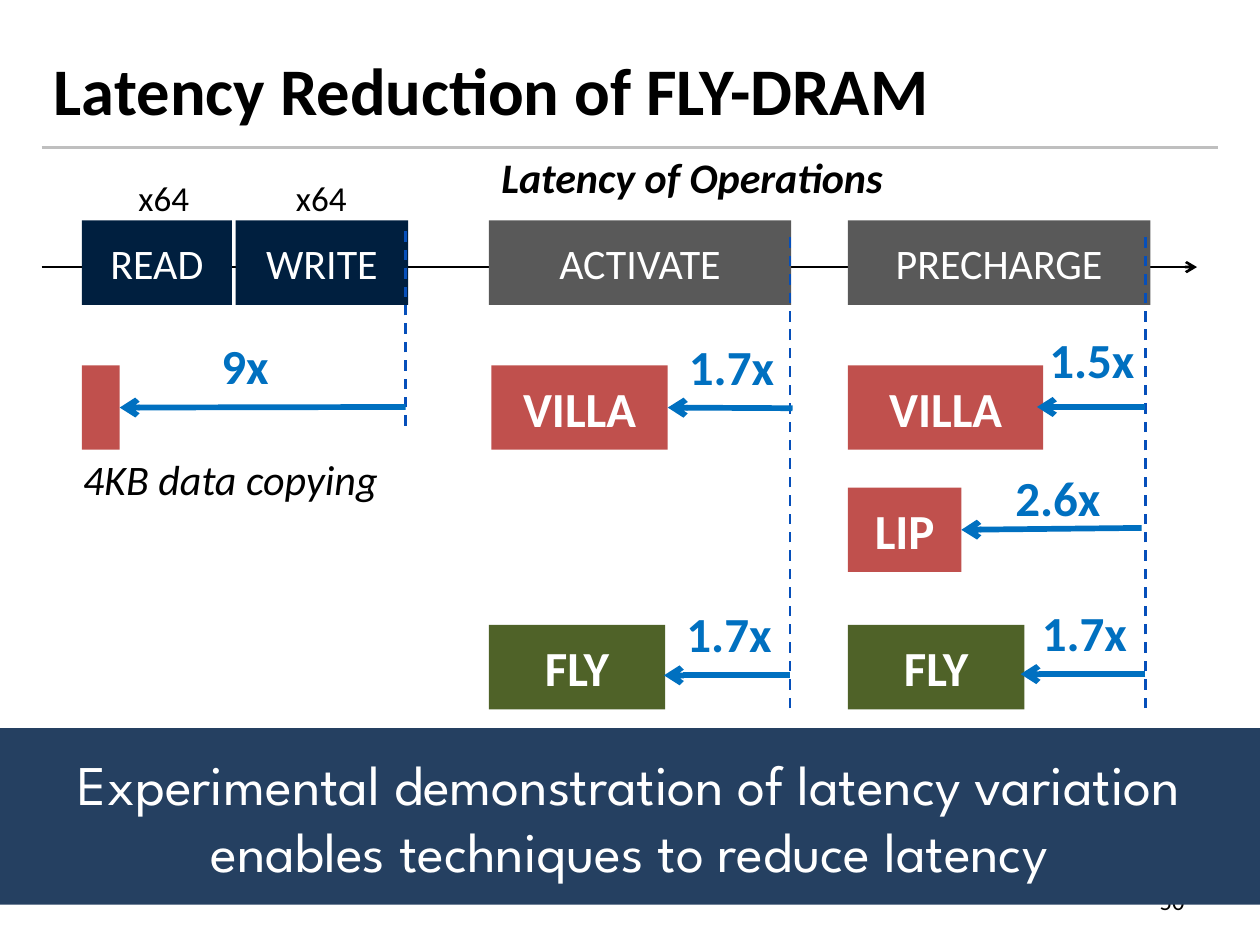
from pptx import Presentation
from pptx.util import Inches, Pt
from pptx.dml.color import RGBColor
from pptx.enum.dml import MSO_LINE
from pptx.enum.shapes import MSO_CONNECTOR, MSO_SHAPE
from pptx.enum.text import MSO_ANCHOR, PP_ALIGN
from pptx.oxml.ns import qn
from lxml.etree import SubElement

THEME = {
    "body": "Calibri", "display": "League Spartan",
    "black": "000000", "white": "FFFFFF", "rule": "BFBFBF",
    "copy": "001F3F", "operation": "595959", "prior": "C0504D",
    "fly": "4F6228", "gain": "0070C0", "limit": "064FBA", "band": "254061",
    "title": 38, "message": 32, "strong": 28, "label": 24, "count": 20, "page": 14,
}

deck = Presentation()
deck.slide_width, deck.slide_height = Inches(10), Inches(7.5)
COL, ROW = deck.slide_width / 100, deck.slide_height / 75
slide = deck.slides.add_slide(deck.slide_layouts[6])


def add_block(col, row, cols, rows, text="", fill=None, size="label", color="black",
              face="body", align=PP_ALIGN.LEFT, anchor=MSO_ANCHOR.TOP, wrap=True, **style):
    box = [round(v) for v in (col * COL, row * ROW, cols * COL, rows * ROW)]
    if fill:
        block = slide.shapes.add_shape(MSO_SHAPE.RECTANGLE, *box)
        block.shadow.inherit = False
        block.fill.solid()
        block.fill.fore_color.rgb = RGBColor.from_string(THEME[fill])
        block.line.fill.background()
        color, align, anchor = "white", PP_ALIGN.CENTER, MSO_ANCHOR.MIDDLE
    else:
        block = slide.shapes.add_textbox(*box)
    frame = block.text_frame
    frame.word_wrap, frame.vertical_anchor = wrap, anchor
    if text:
        paragraph = frame.paragraphs[0]
        paragraph.alignment = align
        run = paragraph.add_run()
        run.text = text
        run.font.color.rgb = RGBColor.from_string(THEME[color])
        for name, value in {"name": THEME[face], "size": Pt(THEME[size]), **style}.items():
            setattr(run.font, name, value)
    return block


def add_line(start, end, color, width=1.5, arrow=False, **style):
    ends = [round(v) for v in (start[0] * COL, start[1] * ROW, end[0] * COL, end[1] * ROW)]
    line = slide.shapes.add_connector(MSO_CONNECTOR.STRAIGHT, *ends)
    line.line.color.rgb = RGBColor.from_string(THEME[color])
    for name, value in {"width": Pt(width), **style}.items():
        setattr(line.line, name, value)
    if arrow:
        SubElement(line.line._get_or_add_ln(), qn("a:tailEnd"), type="arrow")
    SubElement(line._element.spPr, qn("a:effectLst"))
    return line


COPY, ACTIVATE, PRECHARGE = 6.5, 38.8, 67.3
OPERATION_ROW, VILLA_ROW, LIP_ROW, FLY_ROW = 17.5, 29, 38.7, 49.6
BAR = 6.7

add_line((3.3, 11.7), (96.7, 11.7), "rule")
add_block(3.3, 0.8, 93.3, 12.5, "Latency Reduction of FLY-DRAM", size="title",
          anchor=MSO_ANCHOR.MIDDLE, bold=True)
add_block(71.7, 69.5, 23.3, 4, "50", size="page", align=PP_ALIGN.RIGHT, anchor=MSO_ANCHOR.MIDDLE)

add_line((3.3, 21.2), (95, 21.2), "black", arrow=True)
add_block(ACTIVATE, 11.5, 35.2, 5, "Latency of Operations", wrap=False, bold=True, italic=True)
for operation, col, cols, fill in (
    ("READ", COPY, 11.9, "copy"),
    ("WRITE", 18.7, 13.7, "copy"),
    ("ACTIVATE", ACTIVATE, 24, "operation"),
    ("PRECHARGE", PRECHARGE, 24, "operation"),
):
    add_block(col, OPERATION_ROW, cols, BAR, operation, fill)
for col in (10, 22.5):
    add_block(col, 13.5, 6.2, 4.4, "x64", size="count", wrap=False)
add_block(5.6, 35.5, 30.2, 5, "4KB data copying", italic=True)

for col, top, bottom in ((32.2, 17.8, 33.8), (62.7, 18.4, 56.2), (90.9, 18.4, 56.2)):
    add_line((col, bottom), (col, top), "limit", dash_style=MSO_LINE.DASH)

for technique, fill, col, row, cols, gain, gain_at, start, end, joined in (
    ("", "prior", COPY, VILLA_ROW, 3, "9x", (16.6, 26.1), (32.2, 32.3), (9.5, 32.3), True),
    ("VILLA", "prior", 39, VILLA_ROW, 14, "1.7x", (53.7, 26.2), (62.9, 32.4), (53, 32.3), True),
    ("VILLA", "prior", PRECHARGE, VILLA_ROW, 15.5, "1.5x", (82.3, 25.7), (90.9, 32.3), (82.3, 32.3), False),
    ("LIP", "prior", PRECHARGE, LIP_ROW, 9, "2.6x", (79.6, 36.6), (90.6, 41.9), (76.3, 42), True),
    ("FLY", "fly", ACTIVATE, FLY_ROW, 14, "1.7x", (53.5, 47.4), (62.7, 53.6), (52.7, 53.6), False),
    ("FLY", "fly", PRECHARGE, FLY_ROW, 14, "1.7x", (81.7, 47.3), (90.9, 53.5), (81, 53.5), False),
):
    reduced = add_block(col, row, cols, BAR, technique, fill, "strong", bold=True)
    saving = add_line(start, end, "gain", 3.25, arrow=True)
    if joined:
        saving.end_connect(reduced, 3)
    add_block(*gain_at, 3.2 + 1.6 * len(gain), 5.7, gain, size="strong", color="gain",
              wrap=False, bold=True)

add_block(0, 57.8, 100, 14,
          "Experimental demonstration of latency variation enables techniques to reduce latency",
          "band", "message", face="display")

deck.save("out.pptx")
